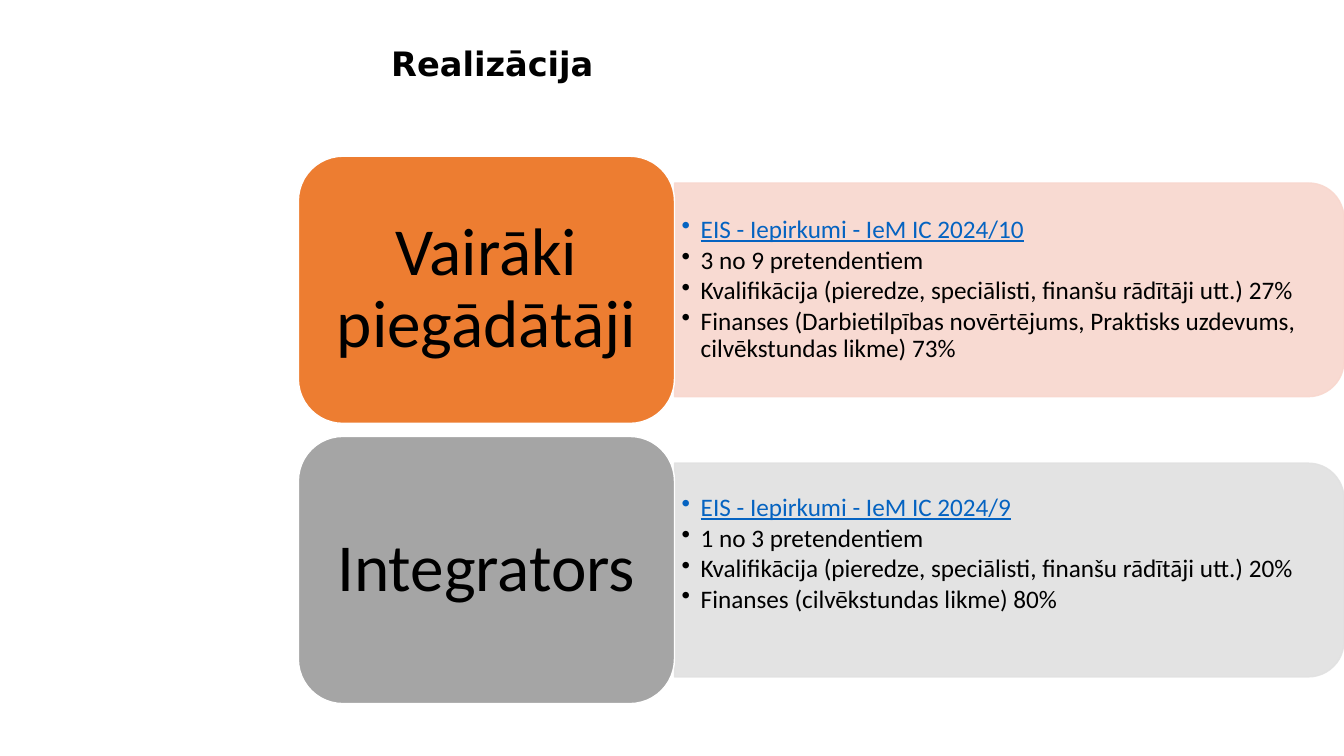
from dataclasses import dataclass

from lxml import etree
from pptx import Presentation
from pptx.dml.color import RGBColor
from pptx.enum.shapes import MSO_SHAPE
from pptx.enum.text import MSO_ANCHOR, PP_ALIGN
from pptx.oxml.ns import qn
from pptx.shapes.autoshape import Shape
from pptx.slide import Slide
from pptx.text.text import TextFrame
from pptx.util import Pt

ROUNDED = MSO_SHAPE.ROUNDED_RECTANGLE
ROUNDED_TOP = MSO_SHAPE.ROUND_2_SAME_RECTANGLE
LEFT, CENTER = PP_ALIGN.LEFT, PP_ALIGN.CENTER
TOP, MIDDLE = MSO_ANCHOR.TOP, MSO_ANCHOR.MIDDLE

PX = 9144  # 100 px to the inch
SLIDE_WIDTH, SLIDE_HEIGHT = 1333, 750
LABEL_LEFT, LABEL_WIDTH, LABEL_HEIGHT = 296, 373, 265
PANEL_LEFT, PANEL_WIDTH, PANEL_HEIGHT = 669, 664, 212
DETAILS_WIDTH, DETAILS_HEIGHT = 654, 191
FIRST_TOP, ROW_STEP = 155, 278
BULLET_INDENT = 19

COLORS = {
    "black": "000000",
    "white": "FFFFFF",
    "link": "0563C1",
    "orange": "ED7D31",
    "pale orange": "F8D7CE",
    "gray": "A5A5A5",
    "pale gray": "E1E1E1",
}


@dataclass
class Approach:
    label: str
    color: str
    panel_color: str
    details: list[str]  # the first one looks like a link
    bottom_inset: int


APPROACHES = [
    Approach("Vairāki piegādātāji", "orange", "pale orange", [
        "EIS - Iepirkumi - IeM IC 2024/10",
        "3 no 9 pretendentiem",
        "Kvalifikācija (pieredze, speciālisti, finanšu rādītāji utt.) 27%",
        "Finanses (Darbietilpības novērtējums, Praktisks uzdevums, "
        "cilvēkstundas likme) 73%",
    ], 4),
    Approach("Integrators", "gray", "pale gray", [
        "EIS - Iepirkumi - IeM IC 2024/9",
        "1 no 3 pretendentiem",
        "Kvalifikācija (pieredze, speciālisti, finanšu rādītāji utt.) 20%",
        "Finanses (cilvēkstundas likme) 80%",
    ], 35),
]


def px(*lengths: int) -> list[int]:
    return [round(length * PX) for length in lengths]


def rgb(name: str) -> RGBColor:
    return RGBColor.from_string(COLORS[name])


def setup_frame(frame: TextFrame, insets: tuple[int, int, int, int],
                anchor: MSO_ANCHOR) -> None:
    frame.word_wrap = True
    frame.vertical_anchor = anchor
    (frame.margin_left, frame.margin_top,
     frame.margin_right, frame.margin_bottom) = px(*insets)


def write_text(frame: TextFrame, text: str, *, size: int, font: str = "Calibri",
               color: str = "black", bold: bool = False, underline: bool = False,
               align: PP_ALIGN = LEFT, space_after: float = 0,
               bullet: bool = False) -> None:
    """Fill the empty first paragraph, or add one after the text."""
    paragraph = frame.add_paragraph() if frame.text else frame.paragraphs[0]
    paragraph.alignment = align
    paragraph.line_spacing = 0.9
    paragraph.space_before = Pt(0)
    paragraph.space_after = Pt(space_after)
    if bullet:
        properties = paragraph._p.get_or_add_pPr()
        properties.set("marL", str(BULLET_INDENT * PX))
        properties.set("indent", str(-BULLET_INDENT * PX))
        etree.SubElement(properties, qn("a:buChar"), char="•")
    run = paragraph.add_run()
    run.text = text
    run.font.name = font
    run.font.size = Pt(size)
    run.font.bold = bold
    run.font.underline = underline
    run.font.color.rgb = rgb(color)


def add_block(slide: Slide, kind: MSO_SHAPE, box: tuple[int, int, int, int],
              fill: str, line: str, opacity: int = 100) -> Shape:
    shape = slide.shapes.add_shape(kind, *px(*box))
    shape.shadow.inherit = False
    shape.fill.solid()
    shape.fill.fore_color.rgb = rgb(fill)
    shape.line.color.rgb = rgb(line)
    shape.line.width = Pt(1)
    if opacity < 100:
        for color in shape._element.spPr.iter(qn("a:srgbClr")):
            etree.SubElement(color, qn("a:alpha"), val=str(opacity * 1000))
    return shape


def add_approach(slide: Slide, approach: Approach, top: int) -> None:
    middle = top + LABEL_HEIGHT / 2

    # Panel: a shape with rounded top corners, turned to face right
    panel_box = (PANEL_LEFT + (PANEL_WIDTH - PANEL_HEIGHT) / 2,
                 middle - PANEL_WIDTH / 2, PANEL_HEIGHT, PANEL_WIDTH)
    panel = add_block(slide, ROUNDED_TOP, panel_box, approach.panel_color,
                      approach.panel_color, opacity=90)
    panel.rotation = 90

    # Bulleted details
    details = slide.shapes.add_textbox(*px(
        PANEL_LEFT, middle - DETAILS_HEIGHT / 2, DETAILS_WIDTH, DETAILS_HEIGHT))
    frame = details.text_frame
    setup_frame(frame, (7, 4, 7, approach.bottom_inset), MIDDLE)
    for index, text in enumerate(approach.details):
        is_link = index == 0
        write_text(frame, text, size=18, color="link" if is_link else "black",
                   underline=is_link, space_after=2.5, bullet=True)

    # Label
    label = add_block(slide, ROUNDED, (LABEL_LEFT, top, LABEL_WIDTH, LABEL_HEIGHT),
                      approach.color, "white")
    setup_frame(label.text_frame, (20, 10, 20, 10), MIDDLE)
    write_text(label.text_frame, approach.label, size=48, align=CENTER)


def main() -> None:
    presentation = Presentation()
    presentation.slide_width, presentation.slide_height = px(SLIDE_WIDTH, SLIDE_HEIGHT)
    slide = presentation.slides.add_slide(presentation.slide_layouts[5])

    # Title
    title = slide.shapes.title
    title.left, title.top, title.width, title.height = px(378, 42, 889, 113)
    setup_frame(title.text_frame, (10, 5, 10, 5), TOP)
    write_text(title.text_frame, "Realizācija", size=24, font="DejaVu Sans", bold=True)

    # Approaches
    for index, approach in enumerate(APPROACHES):
        add_approach(slide, approach, FIRST_TOP + index * ROW_STEP)

    presentation.save("out.pptx")


if __name__ == "__main__":
    main()
